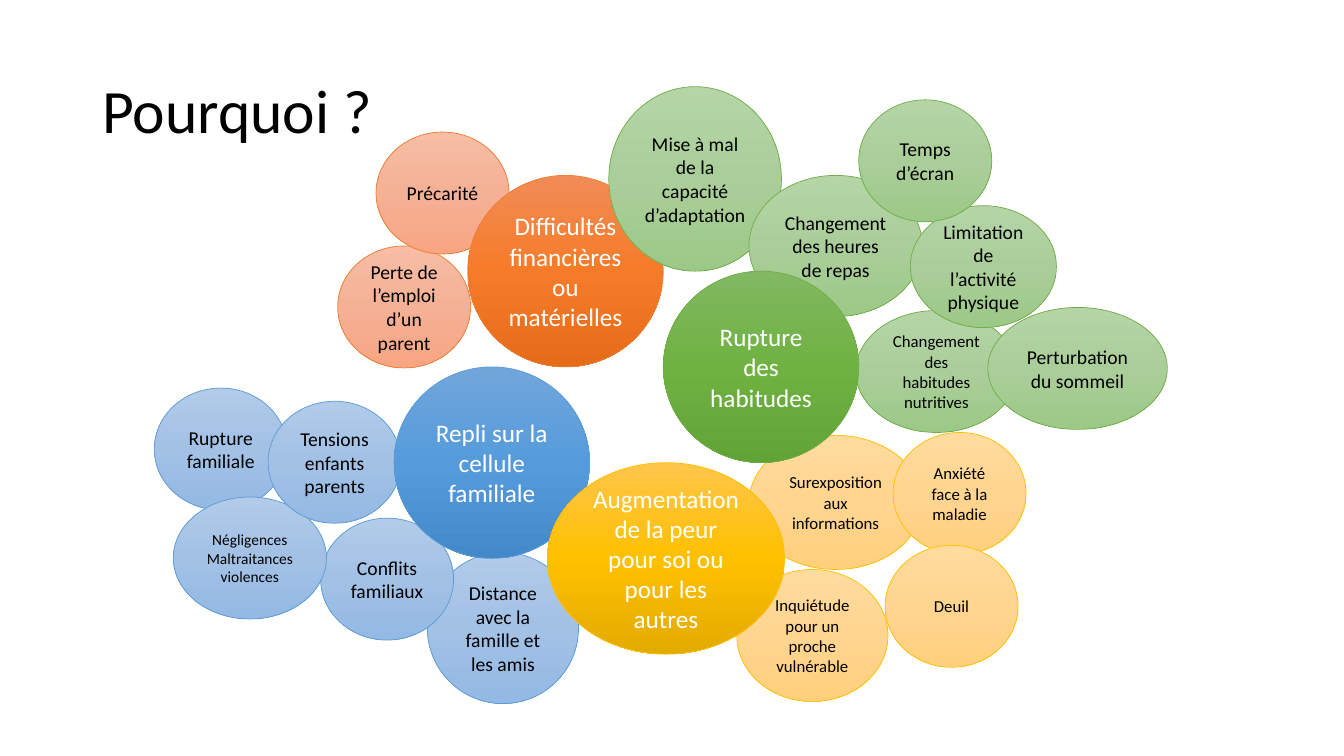
"""Build the "Pourquoi ?" slide: four causes as hub bubbles with their satellites."""
from copy import deepcopy
from dataclasses import dataclass

from pptx import Presentation
from pptx.dml.color import RGBColor
from pptx.enum.shapes import MSO_SHAPE
from pptx.enum.text import MSO_ANCHOR, PP_ALIGN
from pptx.oxml.ns import qn
from pptx.slide import Slide
from pptx.text.text import TextFrame
from pptx.util import Pt


@dataclass(frozen=True)
class Family:
    outline: str
    pale: tuple[str, str, str]
    vivid: tuple[str, str, str]


@dataclass(frozen=True)
class Theme:
    font: str = "Calibri"
    dark: str = "000000"
    light: str = "FFFFFF"
    title_size: float = 44
    hub_size: float = 18
    satellite_size: float = 14
    small_size: float = 12
    tiny_size: float = 11
    outline_width: float = 0.5
    withdrawal: Family = Family(
        "5B9BD5", ("B1CBE9", "A3C1E5", "93B9E4"), ("71A6DB", "559BDB", "448ACA"))
    hardship: Family = Family(
        "ED7D31", ("F7BDA5", "F5B196", "F8A582"), ("F18C57", "F67B28", "E56C19"))
    habits: Family = Family(
        "70AD47", ("B5D5A7", "AACE9A", "9CC987"), ("81B861", "6FB242", "62A336"))
    fear: Family = Family(
        "FFC000", ("FFDB9E", "FFD590", "FFD07C"), ("FFC64B", "FFC000", "E3AB00"))


THEME = Theme()


@dataclass(frozen=True)
class Satellite:
    words: str
    family: Family
    left: float
    top: float
    width: float = 95
    height: float = 87.1
    size: float = THEME.satellite_size
    ink: str = THEME.dark

    @property
    def shades(self) -> tuple[str, str, str]:
        """Return the gradient colours from top to bottom."""
        return self.family.pale


@dataclass(frozen=True)
class Hub(Satellite):
    width: float = 139.7
    height: float = 136.8
    size: float = THEME.hub_size
    ink: str = THEME.light

    @property
    def shades(self) -> tuple[str, str, str]:
        """Return the gradient colours from top to bottom."""
        return self.family.vivid


SMALL = THEME.small_size
BUBBLES: list[Satellite] = [
    Satellite("Distance avec la famille et les amis", THEME.withdrawal, 305.3, 394.6, 108, 108),
    Satellite("Conflits familiaux", THEME.withdrawal, 229, 370.1),
    Satellite("Rupture familiale", THEME.withdrawal, 110.2, 277.2),
    Satellite("Négligences\nMaltraitances\nviolences", THEME.withdrawal, 123.8, 355,
              width=109.4, size=THEME.tiny_size),
    Satellite("Tensions enfants parents", THEME.withdrawal, 191.5, 286.6),
    Satellite("Perte de l’emploi d’un parent", THEME.hardship, 241.2, 175.7),
    Satellite("Précarité", THEME.hardship, 268.6, 94.3),
    Hub("Difficultés financières ou matérielles", THEME.hardship, 334.1, 125.3),
    Hub("Repli sur la cellule familiale", THEME.withdrawal, 281.5, 262.1),
    Satellite("Mise à mal de la capacité d’adaptation", THEME.habits, 434.9, 61.9, 123.3, 131.8),
    Satellite("Changement des heures de repas", THEME.habits, 535, 125.3, 123.8, 100.8),
    Satellite("Changement des habitudes nutritives", THEME.habits, 611.3, 221.8,
              width=115.2, size=SMALL),
    Satellite("Limitation de l’activité physique", THEME.habits, 650.2, 146.9, width=104.4),
    Satellite("Temps d’écran", THEME.habits, 613.4, 71.3),
    Satellite("Perturbation du sommeil", THEME.habits, 705.6, 219.6, width=128.2),
    Satellite("Surexposition aux informations", THEME.fear, 535, 311, 123.8, 95.8, SMALL),
    Satellite("Anxiété face à la maladie", THEME.fear, 637.9, 308.9, size=SMALL),
    Satellite("Inquiétude pour un proche vulnérable", THEME.fear, 526.3, 406.8, 108, 94.3, SMALL),
    Satellite("Deuil", THEME.fear, 632.2, 389.5, size=SMALL),
    Hub("Augmentation de la peur pour soi ou pour les autres", THEME.fear, 391, 330.5, width=169.4),
    Hub("Rupture des habitudes", THEME.habits, 473.8, 193.7),
]


def write(frame: TextFrame, words: str, size: float, ink: str, align: PP_ALIGN) -> None:
    """Fill a text frame with evenly styled, vertically centred paragraphs."""
    frame.word_wrap = True
    frame.vertical_anchor = MSO_ANCHOR.MIDDLE
    frame.text = words
    for paragraph in frame.paragraphs:
        paragraph.alignment = align
        paragraph.font.name = THEME.font
        paragraph.font.size = Pt(size)
        paragraph.font.color.rgb = RGBColor.from_string(ink)


def draw_title(slide: Slide) -> None:
    """Draw the question that heads the slide."""
    title = slide.shapes.add_textbox(Pt(66), Pt(28.8), Pt(828), Pt(104.4))
    write(title.text_frame, "Pourquoi ?", THEME.title_size, THEME.dark, PP_ALIGN.LEFT)
    title.text_frame.paragraphs[0].line_spacing = 0.9


def draw_bubble(slide: Slide, bubble: Satellite) -> None:
    """Draw one ellipse with a three-stop vertical gradient and its label."""
    ellipse = slide.shapes.add_shape(
        MSO_SHAPE.OVAL, Pt(bubble.left), Pt(bubble.top), Pt(bubble.width), Pt(bubble.height))
    ellipse.shadow.inherit = False
    ellipse.line.color.rgb = RGBColor.from_string(bubble.family.outline)
    ellipse.line.width = Pt(THEME.outline_width)
    ellipse.fill.gradient()
    ellipse.fill.gradient_angle = 270
    stop_list = next(ellipse.element.spPr.iter(qn("a:gsLst")))
    stop_list.append(deepcopy(stop_list[0]))
    for index, (stop, shade) in enumerate(zip(ellipse.fill.gradient_stops, bubble.shades)):
        stop.position = index / 2
        stop.color.rgb = RGBColor.from_string(shade)
    write(ellipse.text_frame, bubble.words, bubble.size, bubble.ink, PP_ALIGN.CENTER)


def main() -> None:
    """Build and save the presentation."""
    presentation = Presentation()
    presentation.slide_width, presentation.slide_height = Pt(960), Pt(540)
    slide = presentation.slides.add_slide(presentation.slide_layouts[6])
    draw_title(slide)
    for bubble in BUBBLES:
        draw_bubble(slide, bubble)
    presentation.save("out.pptx")


if __name__ == "__main__":
    main()
